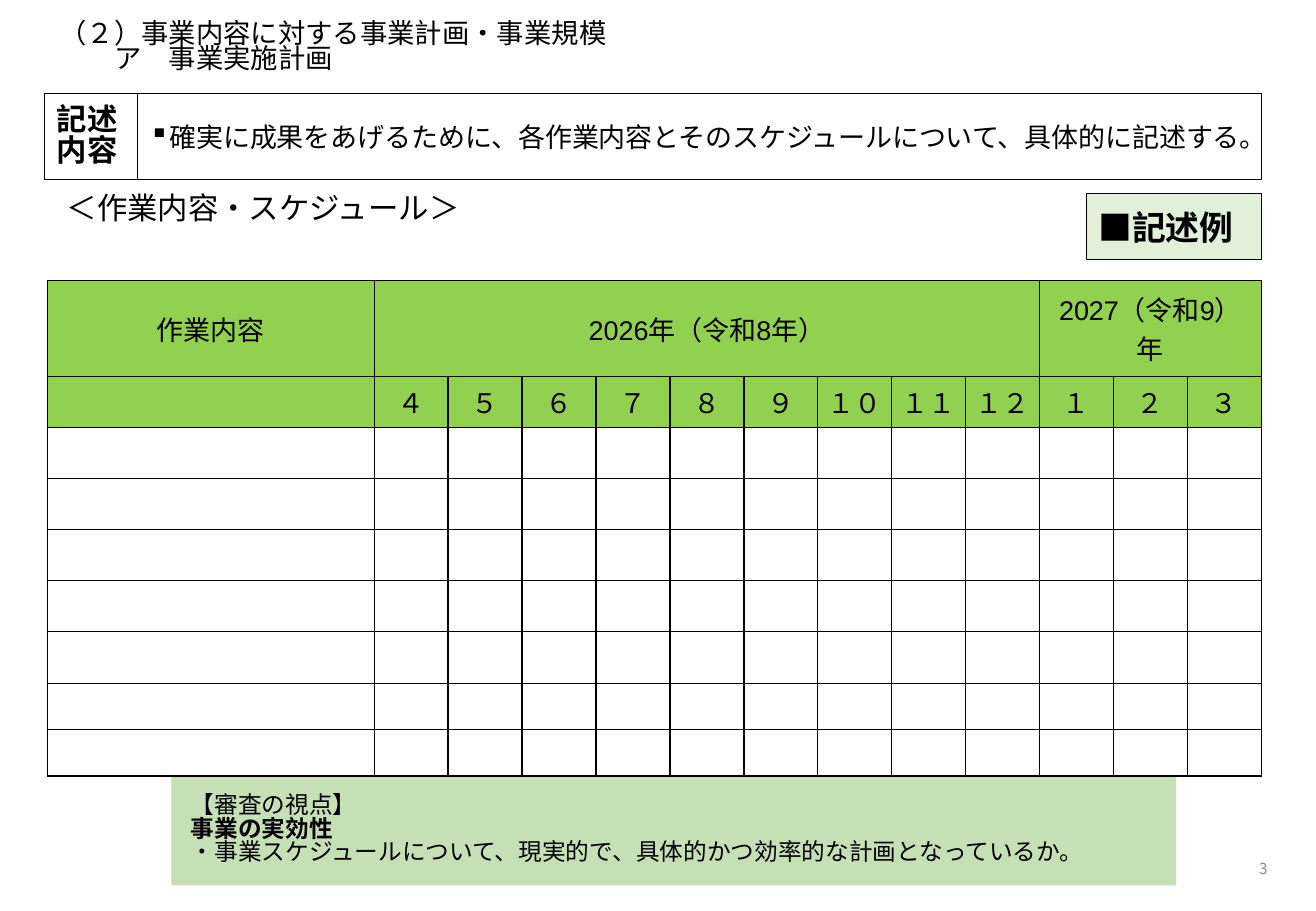
from lxml.etree import SubElement
from pptx import Presentation
from pptx.dml.color import RGBColor
from pptx.enum.shapes import MSO_SHAPE as Shape
from pptx.enum.text import MSO_ANCHOR as Anchor, PP_ALIGN as Align
from pptx.oxml.ns import qn
from pptx.util import Inches, Pt

# Content
WIDTH, HEIGHT = 10.83, 7.5
BLACK, GREY, WHITE = "000000", "898989", "FFFFFF"
HEADER_GREEN, PALE_GREEN, NOTE_GREEN = "92D050", "E2F0D9", "C5E0B4"
GOTHIC, LATIN, TABLE_FONT = "Noto Sans CJK JP", "Calibri", "Arial"

TITLE = ["（２）事業内容に対する事業計画・事業規模", "ア　事業実施計画"]
LABEL = ["記述", "内容"]
GUIDE = ["確実に成果をあげるために、各作業内容とそのスケジュールについて、具体的に記述する。"]
SUBTITLE = ["＜作業内容・スケジュール＞"]
EXAMPLE = ["■記述例"]
REVIEW = [
    "【審査の視点】",
    "事業の実効性",
    "・事業スケジュールについて、現実的で、具体的かつ効率的な計画となっているか。",
]
PAGE_NUMBER = ["3"]
HEADERS = [("作業内容", 1), ("2026年（令和8年）", 9), ("2027（令和9）年", 3)]
MONTHS = ["４", "５", "６", "７", "８", "９", "１０", "１１", "１２", "１", "２", "３"]

# Grid
LEFT, RIGHT = 0.37, 10.38
BAND_TOP, BAND_HEIGHT, LABEL_WIDTH = 0.77, 0.71, 0.76
TABLE_LEFT, TABLE_TOP, TASK_WIDTH = 0.39, 2.31, 2.69
MONTH_WIDTH = (RIGHT - TABLE_LEFT - TASK_WIDTH) / len(MONTHS)
ROW_HEIGHTS = [0.79] + [0.42] * 5 + [0.43] + [0.38] * 2


def color(value):
    return RGBColor.from_string(value)


def style_span(span, size, font, ink=BLACK, bold=False):
    span.font.size = Pt(size)
    span.font.name = font
    span.font.bold = bold
    span.font.color.rgb = color(ink)
    SubElement(span.font._element, qn("a:ea"), typeface=GOTHIC)


def write(box, lines, size, font, ink=BLACK, bold=False, align=Align.LEFT,
          anchor=Anchor.MIDDLE, insets=(0.1, 0.05, 0.1, 0.05), spacing=None):
    frame = box.text_frame
    frame.word_wrap = True
    frame.vertical_anchor = anchor
    (frame.margin_left, frame.margin_top,
     frame.margin_right, frame.margin_bottom) = map(Inches, insets)
    frame.text = "\n".join(lines)
    for para in frame.paragraphs:
        para.alignment = align
        if spacing:
            para.line_spacing = spacing
        for span in para.runs:
            style_span(span, size, font, ink, bold)
    return frame.paragraphs


def add_text(page, area, lines, size, font, **options):
    box = page.shapes.add_textbox(*map(Inches, area))
    return write(box, lines, size, font, **options)


def add_panel(page, area, fill, lines, size, font, kind=Shape.RECTANGLE,
              outlined=True, **options):
    box = page.shapes.add_shape(kind, *map(Inches, area))
    box.shadow.inherit = False
    if kind == Shape.OCTAGON:
        box.adjustments[0] = 0
    if fill:
        box.fill.solid()
        box.fill.fore_color.rgb = color(fill)
    else:
        box.fill.background()
    if outlined:
        box.line.color.rgb = color(BLACK)
        box.line.width = Pt(0.5)
    else:
        box.line.fill.background()
    return write(box, lines, size, font, **options)


def indent(para, margin, first_line=0):
    properties = para._p.get_or_add_pPr()
    properties.set("marL", str(Inches(margin)))
    properties.set("indent", str(Inches(first_line)))
    return properties


def style_cell(cell, fill):
    properties = cell._tc.get_or_add_tcPr()
    for side in ("lnL", "lnR", "lnT", "lnB"):
        line = SubElement(properties, qn(f"a:{side}"), w=str(Pt(1)))
        paint = SubElement(line, qn("a:solidFill"))
        SubElement(paint, qn("a:srgbClr"), val=BLACK)
    if fill:
        cell.fill.solid()
        cell.fill.fore_color.rgb = color(fill)
    else:
        cell.fill.background()
    cell.margin_top = cell.margin_bottom = 0
    cell.margin_left = cell.margin_right = Inches(0.06)


def write_cell(cell, text):
    cell.text = text
    cell.vertical_anchor = Anchor.MIDDLE
    para = cell.text_frame.paragraphs[0]
    para.alignment = Align.CENTER
    style_span(para.runs[0], 16, TABLE_FONT)


def add_schedule(page):
    area = (TABLE_LEFT, TABLE_TOP, RIGHT - TABLE_LEFT, sum(ROW_HEIGHTS))
    table = page.shapes.add_table(len(ROW_HEIGHTS), len(MONTHS) + 1,
                                  *map(Inches, area)).table
    for index, column in enumerate(table.columns):
        column.width = Inches(MONTH_WIDTH if index else TASK_WIDTH)
    for index, height in enumerate(ROW_HEIGHTS):
        table.rows[index].height = Inches(height)
        for cell in table.rows[index].cells:
            style_cell(cell, HEADER_GREEN if index < 2 else None)
    start = 0
    for text, count in HEADERS:
        if count > 1:
            table.cell(0, start).merge(table.cell(0, start + count - 1))
        write_cell(table.cell(0, start), text)
        start += count
    for index, month in enumerate(MONTHS, 1):
        write_cell(table.cell(1, index), month)


def main():
    deck = Presentation()
    deck.slide_width, deck.slide_height = Inches(WIDTH), Inches(HEIGHT)
    page = deck.slides.add_slide(deck.slide_layouts[6])

    # Instruction band
    add_panel(page, (LEFT, BAND_TOP, LABEL_WIDTH, BAND_HEIGHT), None, LABEL,
              18, GOTHIC, bold=True, spacing=0.84)
    guide_left = LEFT + LABEL_WIDTH
    guide = add_panel(page, (guide_left, BAND_TOP, RIGHT - guide_left, BAND_HEIGHT),
                      WHITE, GUIDE, 16, LATIN)
    SubElement(indent(guide[0], 0.1, -0.1), qn("a:buChar"), char="▪")

    # Headings
    add_text(page, (0.45, 1.53, 6.68, 0.42), SUBTITLE, 18, LATIN,
             anchor=Anchor.TOP, insets=(0.1, 0.03, 0.1, 0.03))
    add_panel(page, (8.94, 1.59, RIGHT - 8.94, 0.55), PALE_GREEN, EXAMPLE,
              20, GOTHIC, bold=True)
    title = add_text(page, (0.39, 0.16, 9.75, 0.55), TITLE, 16.2, GOTHIC,
                     anchor=Anchor.TOP, insets=(0.1, 0.03, 0.1, 0.03), spacing=0.77)
    indent(title[1], 0.45)

    # Review note
    review = add_panel(page, (1.41, 6.38, 8.27, 0.91), NOTE_GREEN, REVIEW, 14, GOTHIC,
                       kind=Shape.OCTAGON, outlined=False,
                       insets=(0.16, 0, 0, 0), spacing=0.83)
    review[1].runs[0].font.bold = True

    # Schedule table and page number
    add_schedule(page)
    add_text(page, (8.09, 6.95, 2.44, 0.4), PAGE_NUMBER, 9, GOTHIC,
             ink=GREY, align=Align.RIGHT)

    deck.save("out.pptx")


if __name__ == "__main__":
    main()
